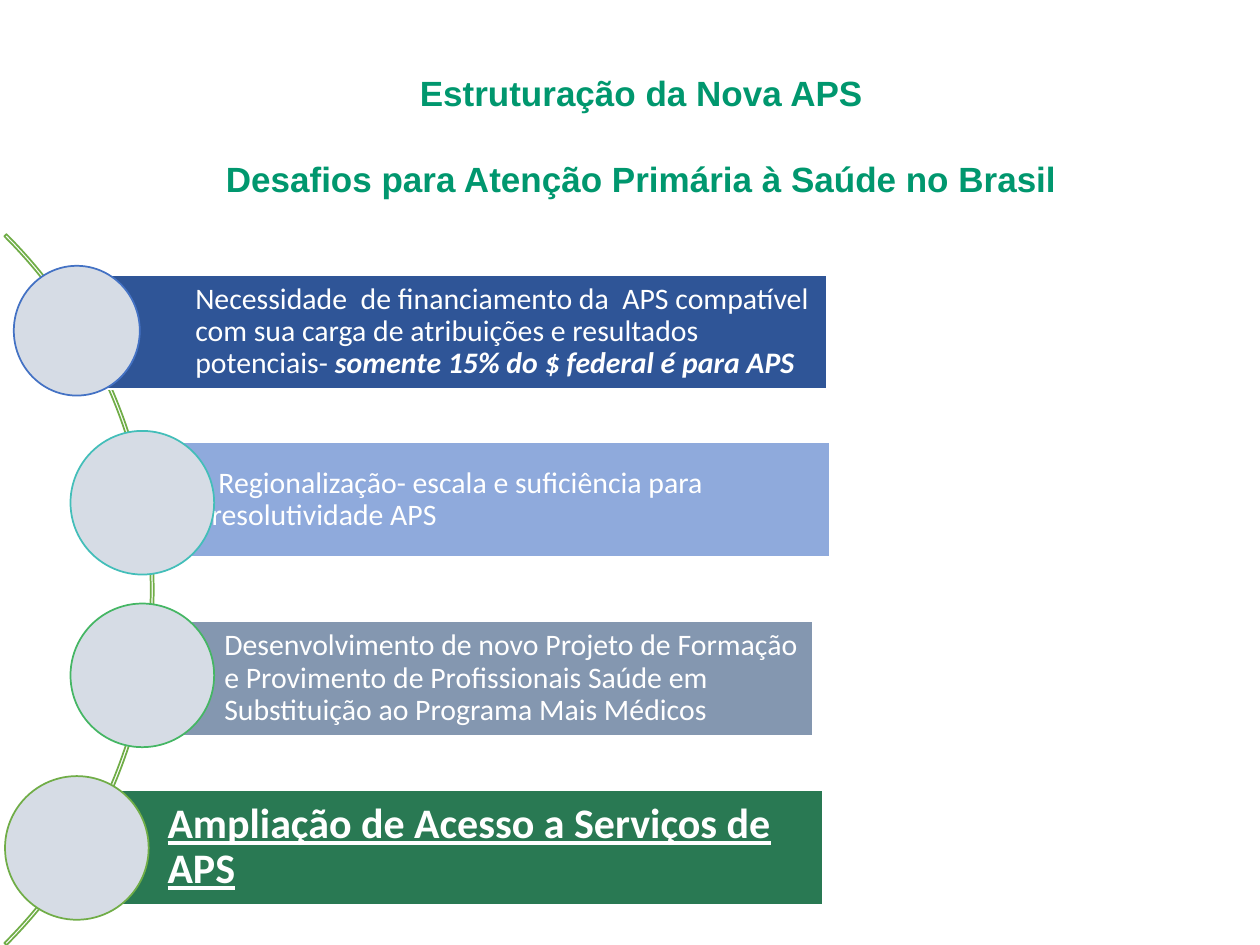
import dataclasses
import typing

import pptx
import pptx.dml.color
import pptx.enum.shapes
import pptx.enum.text
import pptx.util

Inches = pptx.util.Inches
Pt = pptx.util.Pt
Kind = pptx.enum.shapes.MSO_SHAPE
Anchor = pptx.enum.text.MSO_ANCHOR

HUES = {
    "title": "00976E",
    "white": "FFFFFF",
    "disc": "D6DCE5",
    "navy": "2F5597",
    "sky": "8FAADC",
    "slate": "8497B0",
    "forest": "297953",
    "blue": "4472C4",
    "teal": "43BEB9",
    "green": "45B664",
    "lime": "70AD47",
}


class Box(typing.NamedTuple):
    left: float
    top: float
    width: float
    height: float


@dataclasses.dataclass
class Item:
    bar: Box
    fill: str
    disc: Box
    ring: str
    text: str
    accent: str = ""
    size: int = 17
    strong: bool = False
    pad: float = 0.05


BAR = 0.91
DISC = 1.14

ITEMS = [
    Item(Box(0.83, 2.18, 5.73, BAR), "navy", Box(0.11, 2.11, 1, 1.03), "blue",
         "Necessidade  de financiamento da  APS compatível com sua carga "
         "de atribuições e resultados potenciais- ",
         accent="somente 15% do $ federal é para APS"),
    Item(Box(0.96, 3.51, 5.63, BAR), "sky", Box(0.56, 3.42, DISC, DISC), "teal",
         " Regionalização- escala e suficiência para resolutividade APS"),
    Item(Box(1.06, 4.93, 5.39, BAR), "slate", Box(0.56, 4.79, DISC, DISC), "green",
         "Desenvolvimento de novo Projeto de Formação e Provimento de "
         "Profissionais Saúde em Substituição ao Programa Mais Médicos"),
    Item(Box(0.61, 6.27, 5.92, BAR), "forest", Box(0.04, 6.16, DISC, DISC), "lime",
         "Ampliação de Acesso a Serviços de APS",
         size=24, strong=True, pad=0.07),
]


def hue(name: str) -> pptx.dml.color.RGBColor:
    return pptx.dml.color.RGBColor.from_string(HUES[name])


def add_shape(slide, kind, box: Box, line: str, fill: str = ""):
    shape = slide.shapes.add_shape(kind, *map(Inches, box))
    shape.shadow.inherit = False
    if fill:
        shape.fill.solid()
        shape.fill.fore_color.rgb = hue(fill)
    else:
        shape.fill.background()
    shape.line.color.rgb = hue(line)
    shape.line.width = Pt(1)
    return shape


def set_font(font, name: str, size: int, color: str, bold: bool) -> None:
    font.name = name
    font.size = Pt(size)
    font.color.rgb = hue(color)
    font.bold = bold


def add_title(slide) -> None:
    box = Box(0.43, 0.52, 9.32, 1.11)
    frame = slide.shapes.add_textbox(*map(Inches, box)).text_frame
    frame.word_wrap = True
    frame.vertical_anchor = Anchor.MIDDLE
    frame.text = "Estruturação da Nova APS\nDesafios para Atenção Primária à Saúde no Brasil"
    for para in frame.paragraphs:
        para.alignment = pptx.enum.text.PP_ALIGN.CENTER
        set_font(para.font, "Arial", 20, "title", True)
    frame.paragraphs[1].space_before = Pt(25)


def add_arc(slide) -> None:
    arc = add_shape(slide, Kind.BLOCK_ARC, Box(-6.76, 0.69, 7.98, 7.98), "lime")
    for index, value in enumerate((189, 27, 0.003)):
        arc.adjustments[index] = value


def add_item(slide, item: Item) -> None:
    bar = add_shape(slide, Kind.RECTANGLE, item.bar, "white", item.fill)
    frame = bar.text_frame
    frame.word_wrap = True
    frame.vertical_anchor = Anchor.MIDDLE
    frame.margin_left = Inches(0.72)
    frame.margin_top = frame.margin_right = frame.margin_bottom = Inches(item.pad)
    para = frame.paragraphs[0]
    para.alignment = pptx.enum.text.PP_ALIGN.LEFT
    para.line_spacing = 0.9
    set_font(para.font, "Calibri", item.size, "white", item.strong)
    para.font.underline = item.strong
    para.add_run().text = item.text
    if item.accent:
        run = para.add_run()
        run.text = item.accent
        run.font.bold = run.font.italic = True
    add_shape(slide, Kind.OVAL, item.disc, item.ring, "disc")


def main() -> None:
    deck = pptx.Presentation()
    deck.slide_width = Inches(10)
    deck.slide_height = Inches(7.5)
    slide = deck.slides.add_slide(deck.slide_layouts[6])
    add_title(slide)
    add_arc(slide)
    for item in ITEMS:
        add_item(slide, item)
    deck.save("out.pptx")


if __name__ == "__main__":
    main()
